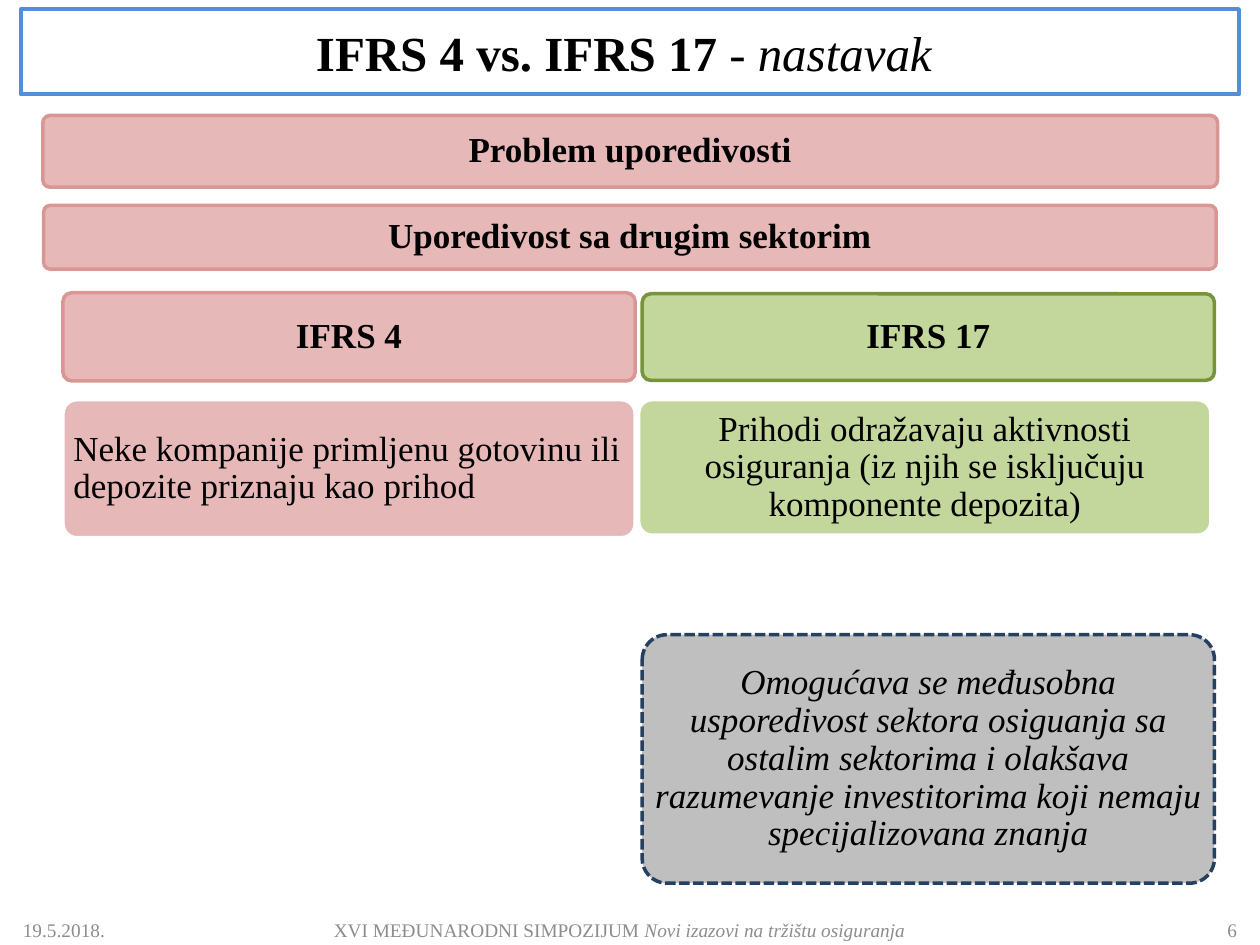
from pptx import Presentation
from pptx.dml.color import RGBColor
from pptx.enum.dml import MSO_LINE
from pptx.enum.shapes import MSO_SHAPE
from pptx.enum.text import MSO_ANCHOR, PP_ALIGN
from pptx.util import Pt

BLACK = RGBColor(0x00, 0x00, 0x00)
WHITE = RGBColor(0xFF, 0xFF, 0xFF)
GREY = RGBColor(0x8C, 0x8C, 0x8C)
SILVER = RGBColor(0xBF, 0xBF, 0xBF)
BLUE = RGBColor(0x55, 0x8E, 0xD5)
NAVY = RGBColor(0x25, 0x40, 0x61)
PINK = RGBColor(0xE6, 0xB9, 0xB8)
ROSE = RGBColor(0xD9, 0x96, 0x94)
GREEN = RGBColor(0xC3, 0xD6, 0x9B)
OLIVE = RGBColor(0x77, 0x93, 0x3C)


class Deck:
    """Holds the style and the current slide; lengths are in points."""
    font = "Times New Roman"
    corner = 0.1

    def __init__(self, width, height):
        self.presentation = Presentation()
        self.presentation.slide_width = Pt(width)
        self.presentation.slide_height = Pt(height)
        self.slide = self.presentation.slides.add_slide(
            self.presentation.slide_layouts[6])

    def set_text(self, shape, runs, size, color=BLACK, align=PP_ALIGN.CENTER):
        """Fill a shape with one paragraph of (text, bold, italic) runs."""
        frame = shape.text_frame
        frame.word_wrap = True
        frame.vertical_anchor = MSO_ANCHOR.MIDDLE
        paragraph = frame.paragraphs[0]
        paragraph.alignment = align
        paragraph.font.name = self.font
        paragraph.font.size = Pt(size)
        paragraph.font.color.rgb = color
        for text, bold, italic in runs:
            run = paragraph.add_run()
            run.text = text
            run.font.bold = bold
            run.font.italic = italic
        return paragraph

    def outline(self, preset, box, border, weight):
        shape = self.slide.shapes.add_shape(preset, *map(Pt, box))
        shape.shadow.inherit = False
        shape.line.color.rgb = border
        shape.line.width = Pt(weight)
        return shape

    def title(self, box, runs):
        banner = self.outline(MSO_SHAPE.RECTANGLE, box, BLUE, 2.25)
        banner.fill.background()
        self.set_text(banner, runs, 28)

    def card(self, box, text, fill, border, bold=False, italic=False,
             align=PP_ALIGN.CENTER, dash=None):
        card = self.outline(MSO_SHAPE.ROUNDED_RECTANGLE, box, border, 2)
        card.adjustments[0] = self.corner
        card.fill.solid()
        card.fill.fore_color.rgb = fill
        if dash:
            card.line.dash_style = dash
        paragraph = self.set_text(card, [(text, bold, italic)], 20, align=align)
        paragraph.line_spacing = 0.9
        paragraph.space_after = Pt(7)
        # The rounded corners already push the text in by about 3% of the height
        frame = card.text_frame
        inset = Pt(6 - 0.03 * box[3])
        frame.margin_left = frame.margin_right = inset
        frame.margin_top = frame.margin_bottom = inset

    def footer(self, left, width, runs, align):
        note = self.slide.shapes.add_textbox(
            Pt(left), Pt(517), Pt(width), Pt(28.8))
        self.set_text(note, runs, 11, GREY, align)


def main():
    deck = Deck(720, 540)

    # Title
    deck.title((12, 5.2, 696, 48.8), [("IFRS 4 vs. IFRS 17 ", True, False),
                                      ("- nastavak ", False, True)])

    # Full-width headings
    deck.card((24.5, 66, 671.3, 41), "Problem uporedivosti",
              PINK, ROSE, bold=True)
    deck.card((25, 117.4, 670, 36.4), "Uporedivost sa drugim sektorim",
              PINK, ROSE, bold=True)

    # Comparison columns
    column = 327
    ifrs4_left, ifrs17_left = 36, 367
    deck.card((ifrs4_left, 167.3, column, 50.4), "IFRS 4",
              PINK, ROSE, bold=True)
    deck.card((ifrs4_left, 228.4, column, 78.9),
              "Neke kompanije primljenu gotovinu ili depozite priznaju kao prihod",
              PINK, WHITE, align=PP_ALIGN.LEFT)
    deck.card((ifrs17_left, 167.9, column, 49.5), "IFRS 17",
              GREEN, OLIVE, bold=True)
    deck.card((ifrs17_left - 2, 228.4, column, 77.5),
              "Prihodi odražavaju aktivnosti osiguranja "
              "(iz njih se isključuju komponente depozita)", GREEN, WHITE)

    # Conclusion
    deck.card((ifrs17_left, 362.7, column, 142),
              "Omogućava se međusobna usporedivost sektora osiguanja sa "
              "ostalim sektorima i olakšava razumevanje investitorima koji "
              "nemaju specijalizovana znanja",
              SILVER, NAVY, italic=True, dash=MSO_LINE.SQUARE_DOT)

    # Footer
    deck.footer(6, 78, [("19.5.2018.", False, False)], PP_ALIGN.LEFT)
    deck.footer(162, 384, [("XVI MEĐUNARODNI SIMPOZIJUM ", False, False),
                           ("Novi izazovi na tržištu osiguranja", False, True)],
                PP_ALIGN.CENTER)
    deck.footer(630, 84, [("6", False, False)], PP_ALIGN.RIGHT)

    deck.presentation.save("out.pptx")


if __name__ == "__main__":
    main()
